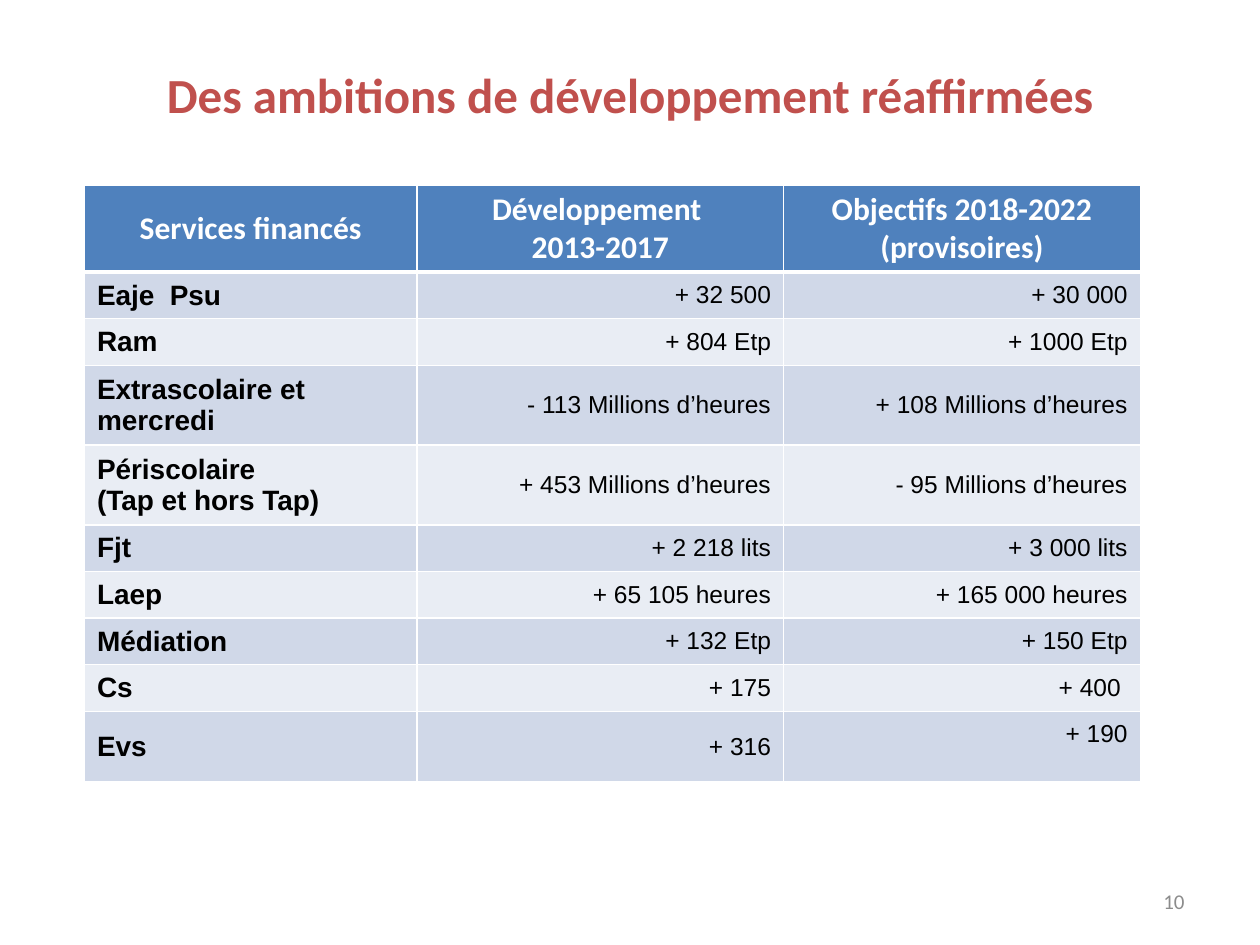
from lxml import etree
from pptx import Presentation
from pptx import util as u
from pptx.dml.color import RGBColor
from pptx.enum import text
from pptx.oxml.ns import qn

LEFT, MID, RIGHT = text.PP_ALIGN.LEFT, text.PP_ALIGN.CENTER, text.PP_ALIGN.RIGHT
WHITE, BLACK, RED, GREY = "FFFFFF", "000000", "C0504D", "8C8C8C"
HEAD, BANDS = "4F81BD", ("D0D8E8", "E9EDF4")

COLS = (2.64, 2.91, 2.83)
TALL = {0: 0.69, 3: 0.63, 4: 0.63, 9: 0.56}
ROWS = (
    ("Services financés", "Développement \n2013-2017", "Objectifs 2018-2022 (provisoires)"),
    ("Eaje  Psu", "+ 32 500", "+ 30 000"),
    ("Ram", "+ 804 Etp", "+ 1000 Etp"),
    ("Extrascolaire et mercredi", "- 113 Millions d’heures", "+ 108 Millions d’heures"),
    ("Périscolaire \n(Tap et hors Tap)", "+ 453 Millions d’heures", "- 95 Millions d’heures"),
    ("Fjt", "+ 2 218 lits", "+ 3 000 lits"),
    ("Laep", "+ 65 105 heures", "+ 165 000 heures"),
    ("Médiation", "+ 132 Etp", "+ 150 Etp"),
    ("Cs", "+ 175", "+ 400 "),
    ("Evs", "+ 316", "+ 190"),
)


def color(code):
    return RGBColor.from_string(code)


def write(frame, words, size, font, code, align, bold=False):
    para = frame.paragraphs[0]
    para.alignment = align
    for i, line in enumerate(words.split("\n")):
        if i:
            para.add_line_break()
        run = para.add_run()
        run.text = line
        run.font.size = u.Pt(size)
        run.font.name = font
        run.font.bold = bold
        run.font.color.rgb = color(code)


def label(slide, box, words, size, code, align, bold=False):
    frame = slide.shapes.add_textbox(*map(u.Inches, box)).text_frame
    frame.word_wrap = True
    frame.vertical_anchor = text.MSO_ANCHOR.MIDDLE
    write(frame, words, size, "Calibri", code, align, bold)


def border(cell, widths):
    props = cell._tc.get_or_add_tcPr()
    for i, (side, width) in enumerate(zip("LRTB", widths)):
        line = etree.Element(qn(f"a:ln{side}"), w=str(u.Pt(width)))
        fill = etree.SubElement(line, qn("a:solidFill"))
        etree.SubElement(fill, qn("a:srgbClr"), val=WHITE)
        props.insert(i, line)


def paint(cell, words, row, col):
    cell.vertical_anchor = text.MSO_ANCHOR.MIDDLE
    cell.fill.solid()
    if row == 0:
        cell.fill.fore_color.rgb = color(HEAD)
        cell.margin_top = cell.margin_bottom = u.Inches(0.04)
        write(cell.text_frame, words, 18, "Calibri", WHITE, MID, True)
    else:
        cell.fill.fore_color.rgb = color(BANDS[(row - 1) % 2])
        first = col == 0
        write(cell.text_frame, words, 16 if first else 14, "Arial", BLACK,
              LEFT if first else RIGHT, first)
    border(cell, (1, 1, 3 if row == 1 else 1, 3 if row == 0 else 1))


def grid(slide, left, top):
    highs = [TALL.get(i, 0.37) for i in range(len(ROWS))]
    size = map(u.Inches, (left, top, sum(COLS), sum(highs)))
    table = slide.shapes.add_table(len(ROWS), len(COLS), *size).table
    for column, width in zip(table.columns, COLS):
        column.width = u.Inches(width)
    for r, (line, high) in enumerate(zip(ROWS, highs)):
        table.rows[r].height = u.Inches(high)
        for c, words in enumerate(line):
            paint(table.cell(r, c), words, r, c)
    # The last value sits a little above the middle
    table.cell(len(ROWS) - 1, 2).margin_bottom = u.Inches(0.25)


def main():
    deck = Presentation()
    deck.slide_width, deck.slide_height = u.Inches(10), u.Inches(7.5)
    slide = deck.slides.add_slide(deck.slide_layouts[6])

    # Title
    label(slide, (0, 0.46, 10, 0.57), "Des ambitions de développement réaffirmées",
          28, RED, MID, True)
    # Table of services
    grid(slide, 0.67, 1.47)
    # Page number
    label(slide, (7.17, 6.95, 2.33, 0.4), "10", 12, GREY, RIGHT)

    deck.save("out.pptx")


if __name__ == "__main__":
    main()
